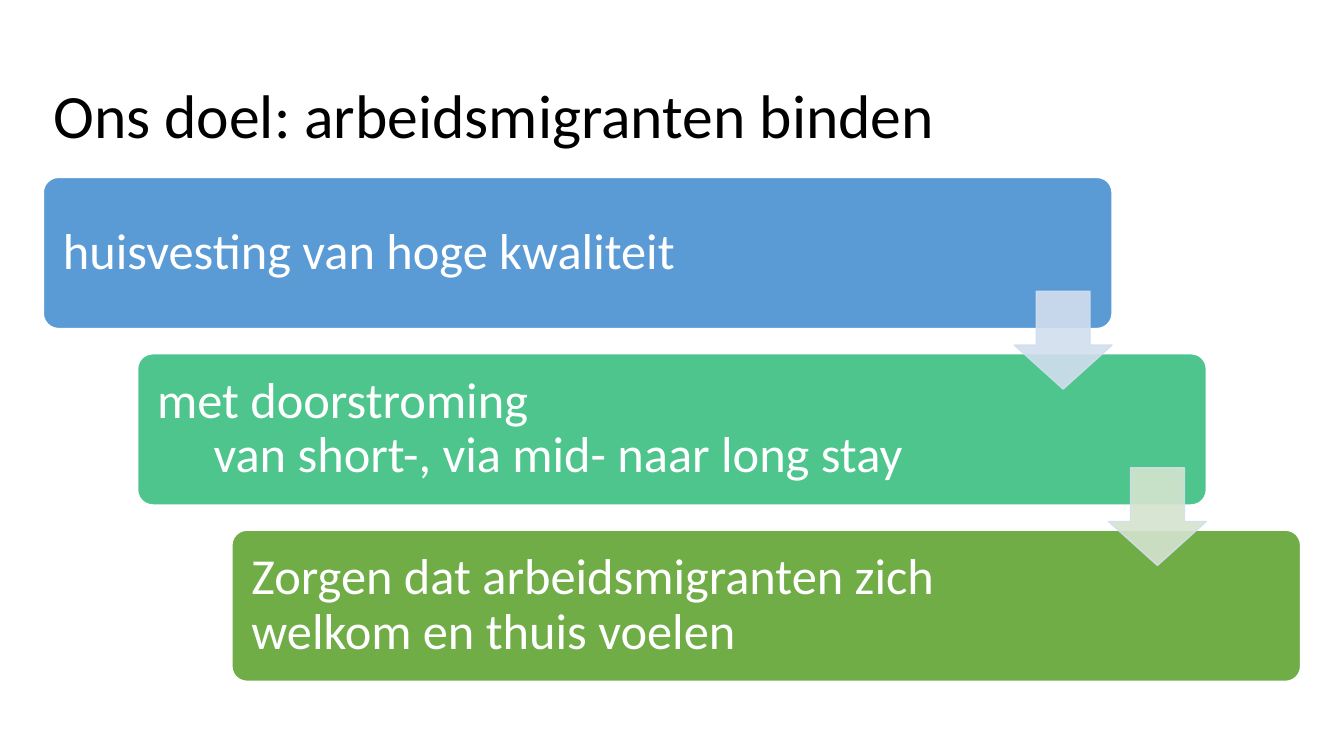
from dataclasses import dataclass

from lxml.etree import SubElement
from pptx import Presentation
from pptx.dml.color import RGBColor
from pptx.enum.shapes import MSO_SHAPE
from pptx.enum.text import MSO_ANCHOR, PP_ALIGN
from pptx.oxml.ns import qn
from pptx.util import Inches, Pt

STEP_X, STEP_Y = 0.935, 1.75
WHITE = "FFFFFF"


@dataclass
class Step:
    lines: list[str]
    fill: str
    indent: float = 0  # inches, second line only


STEPS = [
    Step(["huisvesting van hoge kwaliteit"], "5B9BD5"),
    Step(["met doorstroming", "van short-, via mid- naar long stay"], "4DC58D", 0.56),
    Step(["Zorgen dat arbeidsmigranten zich", "welkom en thuis voelen"], "70AD47"),
]
ARROWS = ["D2DEEF", "D5E3CF"]


def rgb(code: str) -> RGBColor:
    return RGBColor.from_string(code)


def style(para, size: int, color: str) -> None:
    para.alignment = PP_ALIGN.LEFT
    para.line_spacing = 0.9
    para.font.name = "Calibri"
    para.font.size = Pt(size)
    para.font.color.rgb = rgb(color)


def add_block(slide, kind, box: tuple, adjust: list[float], fill: str, line: str):
    shape = slide.shapes.add_shape(kind, *map(Inches, box))
    for i, value in enumerate(adjust):
        shape.adjustments[i] = value
    shape.shadow.inherit = False
    shape.fill.solid()
    shape.fill.fore_color.rgb = rgb(fill)
    shape.line.color.rgb = rgb(line)
    shape.line.width = Pt(1)
    return shape


def add_step(slide, index: int, step: Step) -> None:
    box = (0.43 + index * STEP_X, 1.76 + index * STEP_Y, 10.6, 1.5)
    shape = add_block(slide, MSO_SHAPE.ROUNDED_RECTANGLE, box, [0.1], step.fill, WHITE)
    frame = shape.text_frame
    frame.word_wrap = True
    frame.vertical_anchor = MSO_ANCHOR.MIDDLE
    frame.margin_left = frame.margin_right = Inches(0.15)
    frame.margin_top = frame.margin_bottom = Inches(0.15)
    frame.text = "\n".join(step.lines)
    for para in frame.paragraphs:
        style(para, 36, WHITE)
    if step.indent:
        props = frame.paragraphs[1]._p.get_or_add_pPr()
        props.set("marL", str(Inches(step.indent)))


def add_arrow(slide, index: int, fill: str) -> None:
    box = (10.06 + index * STEP_X, 2.89 + index * STEP_Y, 0.97, 0.97)
    shape = add_block(slide, MSO_SHAPE.DOWN_ARROW, box, [0.55, 0.45], fill, "D2DEEF")
    for color in shape._element.spPr.iter(qn("a:srgbClr")):
        SubElement(color, qn("a:alpha"), val="90000")


def main() -> None:
    deck = Presentation()
    deck.slide_width, deck.slide_height = Inches(13.33), Inches(7.5)
    slide = deck.slides.add_slide(deck.slide_layouts[5])

    title = slide.shapes.title
    title.left, title.top = Inches(0.43), Inches(0.35)
    title.width, title.height = Inches(12.48), Inches(1.65)
    title.text_frame.text = "Ons doel: arbeidsmigranten binden"
    title.text_frame.vertical_anchor = MSO_ANCHOR.MIDDLE
    style(title.text_frame.paragraphs[0], 44, "000000")

    for index, step in enumerate(STEPS):
        add_step(slide, index, step)
    for index, fill in enumerate(ARROWS):
        add_arrow(slide, index, fill)

    deck.save("out.pptx")


if __name__ == "__main__":
    main()
